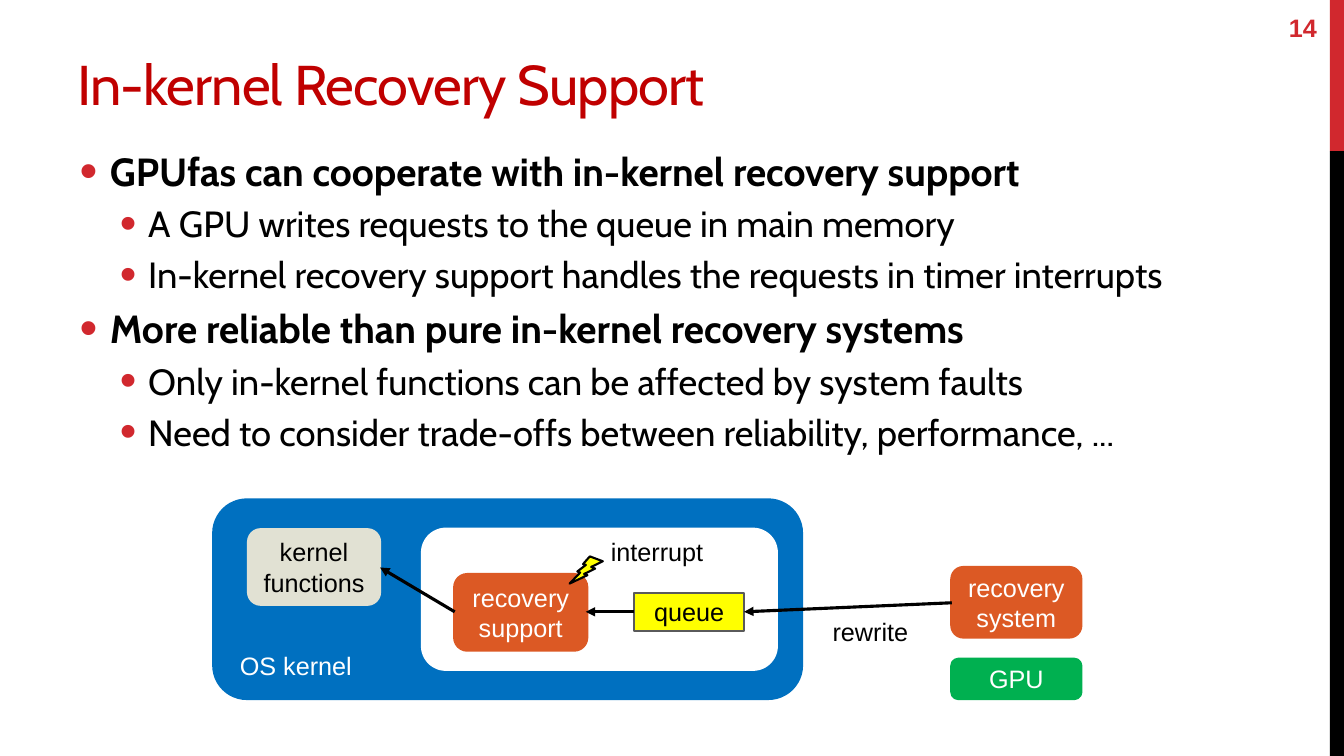
from dataclasses import dataclass
from typing import Optional

from lxml.etree import SubElement
from pptx import Presentation
from pptx.dml.color import RGBColor
from pptx.enum.shapes import MSO_CONNECTOR, MSO_SHAPE
from pptx.enum.text import MSO_ANCHOR, PP_ALIGN
from pptx.oxml.ns import qn
from pptx.util import Inches, Pt

RED = RGBColor(0xD1, 0x28, 0x2E)
DARK_RED = RGBColor(0xC0, 0x00, 0x00)
BLACK = RGBColor(0x00, 0x00, 0x00)
WHITE = RGBColor(0xFF, 0xFF, 0xFF)
BLUE = RGBColor(0x00, 0x70, 0xC0)
GREEN = RGBColor(0x00, 0xB0, 0x50)
ORANGE = RGBColor(0xDC, 0x59, 0x24)
YELLOW = RGBColor(0xFF, 0xFF, 0x00)
BEIGE = RGBColor(0xE1, 0xE1, 0xD3)
GREY = RGBColor(0x5A, 0x5A, 0x5A)

HEADING_FONT = "Cabin"
DIAGRAM_FONT = "Arial"
ROUNDED = MSO_SHAPE.ROUNDED_RECTANGLE


@dataclass
class Block:
    left: float
    top: float
    width: float
    height: float
    fill: RGBColor
    lines: tuple[str, ...] = ()
    color: RGBColor = WHITE
    kind: MSO_SHAPE = ROUNDED
    border: Optional[RGBColor] = None
    border_width: float = 2.25
    mirrored: bool = False


@dataclass
class Label:
    left: float
    top: float
    width: float
    text: str
    color: RGBColor = BLACK
    height: float = 0.4
    size: float = 18
    font: str = DIAGRAM_FONT
    bold: bool = False
    align: PP_ALIGN = PP_ALIGN.LEFT
    anchor: MSO_ANCHOR = MSO_ANCHOR.TOP
    wrap: bool = False
    tracking: float = 0


@dataclass
class Arrow:
    start: tuple[float, float]
    end: tuple[float, float]


@dataclass
class BulletStyle:
    size: float
    bold: bool
    indent: float
    hanging: float
    space_before: float


BULLET_STYLES = (
    BulletStyle(28, True, 0.3, 0.3, 6),
    BulletStyle(26, False, 0.68, 0.28, 5.2),
)

BULLETS = (
    (0, "GPUfas can cooperate with in-kernel recovery support"),
    (1, "A GPU writes requests to the queue in main memory"),
    (1, "In-kernel recovery support handles the requests in timer interrupts"),
    (0, "More reliable than pure in-kernel recovery systems"),
    (1, "Only in-kernel functions can be affected by system faults"),
    (1, "Need to consider trade-offs between reliability, performance, ..."),
)

SIDE_BAR = (
    Block(13.19, 0, 0.16, 1.5, RED, kind=MSO_SHAPE.RECTANGLE, border_width=0),
    Block(13.19, 1.5, 0.16, 6, BLACK, kind=MSO_SHAPE.RECTANGLE, border_width=0),
)

HEADINGS = (
    Label(0.67, 0.17, 12.02, "In-kernel Recovery Support", DARK_RED, 1.04, 40, HEADING_FONT,
          anchor=MSO_ANCHOR.BOTTOM, wrap=True, tracking=-0.6),
    Label(12.16, 0.07, 1, "14", RED, bold=True, align=PP_ALIGN.RIGHT,
          anchor=MSO_ANCHOR.MIDDLE, wrap=True),
)

DIAGRAM = (
    Block(2.12, 4.96, 5.83, 1.97, BLUE),
    Block(9.44, 6.54, 1.28, 0.39, GREEN, ("GPU",)),
    Block(9.44, 5.63, 1.28, 0.69, ORANGE, ("recovery system",)),
    Label(8.16, 6.07, 0.96, "rewrite"),
    Label(2.28, 6.4, 1.32, "OS kernel", WHITE),
    Block(4.19, 5.25, 3.51, 1.39, WHITE),
    Block(6.29, 5.88, 1.09, 0.38, YELLOW, ("queue",), BLACK, MSO_SHAPE.RECTANGLE, GREY, 1.5),
    Arrow((9.44, 5.98), (7.38, 6.07)),
    Block(4.51, 5.7, 1.31, 0.75, ORANGE, ("recovery", "support")),
    Arrow((6.29, 6.07), (5.81, 6.07)),
    Block(2.46, 5.25, 1.31, 0.75, BEIGE, ("kernel", "functions"), BLACK, border_width=1.5),
    Arrow((4.51, 6.07), (3.77, 5.63)),
    Block(5.65, 5.52, 0.33, 0.27, YELLOW, kind=MSO_SHAPE.LIGHTNING_BOLT,
          border=BLACK, border_width=1.5, mirrored=True),
    Label(5.96, 5.27, 1.13, "interrupt"),
)


def add_span(para, text: str, font: str, size: float, color: RGBColor, bold: bool = False):
    span = para.add_run()
    span.text = text
    span.font.name = font
    span.font.size = Pt(size)
    span.font.color.rgb = color
    span.font.bold = bold
    return span


def add_block(page, block: Block) -> None:
    shape = page.shapes.add_shape(block.kind, Inches(block.left), Inches(block.top),
                                  Inches(block.width), Inches(block.height))
    shape.shadow.inherit = False
    shape.fill.solid()
    shape.fill.fore_color.rgb = block.fill
    if block.border_width:
        shape.line.color.rgb = block.border or block.fill
        shape.line.width = Pt(block.border_width)
    else:
        shape.line.fill.background()
    if block.mirrored:
        shape._element.spPr.get_or_add_xfrm().set("flipH", "1")
    frame = shape.text_frame
    frame.vertical_anchor = MSO_ANCHOR.MIDDLE
    for index, line in enumerate(block.lines):
        para = frame.add_paragraph() if index else frame.paragraphs[0]
        para.alignment = PP_ALIGN.CENTER
        add_span(para, line, DIAGRAM_FONT, 18, block.color)


def add_label(page, label: Label) -> None:
    box = page.shapes.add_textbox(Inches(label.left), Inches(label.top),
                                  Inches(label.width), Inches(label.height))
    frame = box.text_frame
    frame.word_wrap = label.wrap
    frame.vertical_anchor = label.anchor
    para = frame.paragraphs[0]
    para.alignment = label.align
    span = add_span(para, label.text, label.font, label.size, label.color, label.bold)
    if label.tracking:
        span.font._element.set("spc", str(round(label.tracking * 100)))


def add_arrow(page, arrow: Arrow) -> None:
    line = page.shapes.add_connector(MSO_CONNECTOR.STRAIGHT,
                                     *map(Inches, arrow.start + arrow.end))
    line.line.color.rgb = BLACK
    line.line.width = Pt(2.25)
    SubElement(line.line._get_or_add_ln(), qn("a:tailEnd"), type="triangle")
    SubElement(line._element.spPr, qn("a:effectLst"))


def add_bullets(page) -> None:
    box = page.shapes.add_textbox(Inches(0.67), Inches(1.41), Inches(12.02), Inches(5.69))
    frame = box.text_frame
    frame.word_wrap = True
    frame.margin_left = frame.margin_right = Inches(0.12)
    for index, (level, text) in enumerate(BULLETS):
        style = BULLET_STYLES[level]
        para = frame.add_paragraph() if index else frame.paragraphs[0]
        para.level = level
        para.space_before = Pt(style.space_before)
        props = para._p.get_or_add_pPr()
        props.set("marL", str(Inches(style.indent)))
        props.set("indent", str(-Inches(style.hanging)))
        SubElement(SubElement(props, qn("a:buClr")), qn("a:srgbClr"), val=str(RED))
        SubElement(props, qn("a:buSzPct"), val="130000")
        SubElement(props, qn("a:buFont"), typeface=DIAGRAM_FONT)
        SubElement(props, qn("a:buChar"), char="•")
        add_span(para, text, HEADING_FONT, style.size, BLACK, style.bold)


def main() -> None:
    deck = Presentation()
    deck.slide_width, deck.slide_height = Inches(13.33), Inches(7.5)
    page = deck.slides.add_slide(deck.slide_layouts[6])
    painters = {Block: add_block, Label: add_label, Arrow: add_arrow}
    for item in SIDE_BAR + HEADINGS:
        painters[type(item)](page, item)
    add_bullets(page)
    for item in DIAGRAM:
        painters[type(item)](page, item)
    deck.save("out.pptx")


if __name__ == "__main__":
    main()
